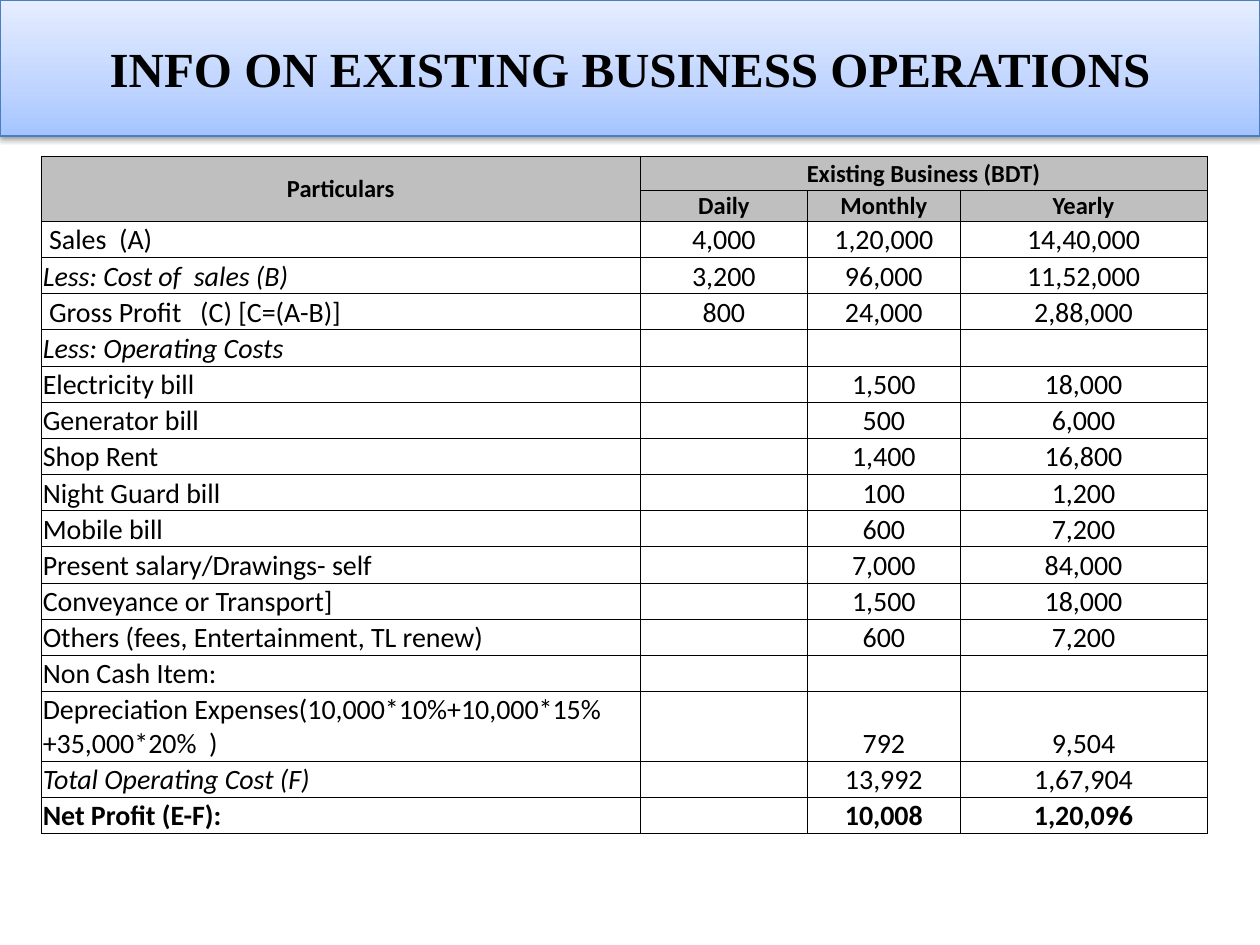
import copy

import pptx
import pptx.dml.color
import pptx.enum.text
import pptx.oxml
import pptx.oxml.ns
import pptx.util
from lxml import etree

Inches, Pt = pptx.util.Inches, pptx.util.Pt
qn = pptx.oxml.ns.qn
ALIGN, ANCHOR = pptx.enum.text.PP_ALIGN, pptx.enum.text.MSO_ANCHOR

TITLE = "INFO ON EXISTING BUSINESS OPERATIONS"
GRADIENT = [(0, "A4C4FF"), (0.35, "BFD4FF"), (1, "E6EEFF")]
HEADER = [
    ("Particulars", "Existing Business (BDT)", "", ""),
    ("", "Daily", "Monthly", "Yearly"),
]
BODY = [
    ("Sales  (A)", "4,000", "1,20,000", "14,40,000"),
    ("Less: Cost of  sales (B)", "3,200", "96,000", "11,52,000"),
    ("Gross Profit   (C) [C=(A-B)]", "800", "24,000", "2,88,000"),
    ("Less: Operating Costs", "", "", ""),
    ("Electricity bill", "", "1,500", "18,000"),
    ("Generator bill", "", "500", "6,000"),
    ("Shop Rent", "", "1,400", "16,800"),
    ("Night Guard bill", "", "100", "1,200"),
    ("Mobile bill", "", "600", "7,200"),
    ("Present salary/Drawings- self", "", "7,000", "84,000"),
    ("Conveyance or Transport]", "", "1,500", "18,000"),
    ("Others (fees, Entertainment, TL renew)", "", "600", "7,200"),
    ("Non Cash Item:", "", "", ""),
    ("Depreciation Expenses(10,000*10%+10,000*15%+35,000*20%  )", "", "792", "9,504"),
    ("Total Operating Cost (F)", "", "13,992", "1,67,904"),
    ("Net Profit (E-F):", "", "10,008", "1,20,096"),
]
INDENTED = ("Sales", "Gross")
ITALIC = ("Less", "Total")
BOLD = "Net Profit"
TALL = "Depreciation"
COL_WIDTHS = [4.75, 1.33, 1.21, 1.96]
HEADER_HEIGHTS = [0.27, 0.24]
TALL_HEIGHT, TABLE_HEIGHT = 0.55, 5.37


def rgb(value):
    return pptx.dml.color.RGBColor.from_string(value)


def set_font(p, name, size, bold=False, italic=False):
    p.font.name, p.font.size = name, Pt(size)
    p.font.bold, p.font.italic = bold, italic
    p.font.color.rgb = rgb("000000")


def add_title(slide):
    sp = slide.shapes.title
    sp.left, sp.top, sp.width, sp.height = 0, 0, Inches(10), Inches(1.08)
    sp.fill.gradient()
    sp.fill.gradient_angle = 90
    stops = sp._element.spPr.find(".//" + qn("a:gsLst"))
    stops.insert(1, copy.deepcopy(stops[0]))
    for stop, (position, color) in zip(sp.fill.gradient_stops, GRADIENT):
        stop.position = position
        stop.color.rgb = rgb(color)
    sp.line.color.rgb = rgb("4B7EBC")
    sp.line.width = Pt(0.75)
    effects = etree.SubElement(sp._element.spPr, qn("a:effectLst"))
    shadow = etree.SubElement(
        effects, qn("a:outerShdw"), blurRad=str(Pt(3.1)), dist=str(Pt(1.6)),
        dir="5400000", rotWithShape="0")
    color = etree.SubElement(shadow, qn("a:srgbClr"), val="000000")
    etree.SubElement(color, qn("a:alpha"), val="38000")
    tf = sp.text_frame
    tf.text = TITLE
    tf.vertical_anchor = ANCHOR.MIDDLE
    p = tf.paragraphs[0]
    p.alignment = ALIGN.CENTER
    set_font(p, "Times New Roman", 28, bold=True)


def add_borders(cell):
    tcPr = cell._tc.get_or_add_tcPr()
    for i, side in enumerate(("lnL", "lnR", "lnT", "lnB")):
        ln = etree.Element(qn("a:" + side), w=str(Pt(0.5)))
        fill = etree.SubElement(ln, qn("a:solidFill"))
        etree.SubElement(fill, qn("a:srgbClr"), val="000000")
        tcPr.insert(i, ln)


def fill_cell(cell, text, label, is_header, is_first):
    cell.margin_left = Inches(0.06 if is_first and label.startswith(INDENTED) else 0.01)
    cell.margin_right = cell.margin_top = Inches(0.01)
    cell.margin_bottom = 0
    cell.vertical_anchor = ANCHOR.MIDDLE if is_header else ANCHOR.BOTTOM
    cell.fill.solid()
    cell.fill.fore_color.rgb = rgb("BFBFBF" if is_header else "FFFFFF")
    add_borders(cell)
    size = 14 if is_header else 16
    p = cell.text_frame.paragraphs[0]
    p.alignment = ALIGN.LEFT if is_first and not is_header else ALIGN.CENTER
    set_font(p, "Calibri", size, bold=is_header or label.startswith(BOLD),
             italic=is_first and label.startswith(ITALIC))
    if text:
        p.add_run().text = text
    else:
        etree.SubElement(p._p, qn("a:endParaRPr"), sz=str(size * 100))


def add_table(slide):
    rows = HEADER + BODY
    table = slide.shapes.add_table(
        len(rows), len(COL_WIDTHS), Inches(0.33), Inches(1.24),
        Inches(sum(COL_WIDTHS)), Inches(TABLE_HEIGHT)).table
    table.first_row = table.horz_banding = False
    for column, width in zip(table.columns, COL_WIDTHS):
        column.width = Inches(width)
    row_height = (TABLE_HEIGHT - sum(HEADER_HEIGHTS) - TALL_HEIGHT) / (len(BODY) - 1)
    heights = HEADER_HEIGHTS + [
        TALL_HEIGHT if row[0].startswith(TALL) else row_height for row in BODY]
    for r, values in enumerate(rows):
        table.rows[r].height = Inches(heights[r])
        for c, text in enumerate(values):
            fill_cell(table.cell(r, c), text, values[0], r < len(HEADER), c == 0)
    table.cell(0, 0).merge(table.cell(1, 0))
    table.cell(0, 1).merge(table.cell(0, 3))


def main():
    prs = pptx.Presentation()
    prs.slide_width, prs.slide_height = Inches(10), Inches(7.5)
    slide = prs.slides.add_slide(prs.slide_layouts[5])
    add_title(slide)
    add_table(slide)
    prs.save("out.pptx")


if __name__ == "__main__":
    main()
